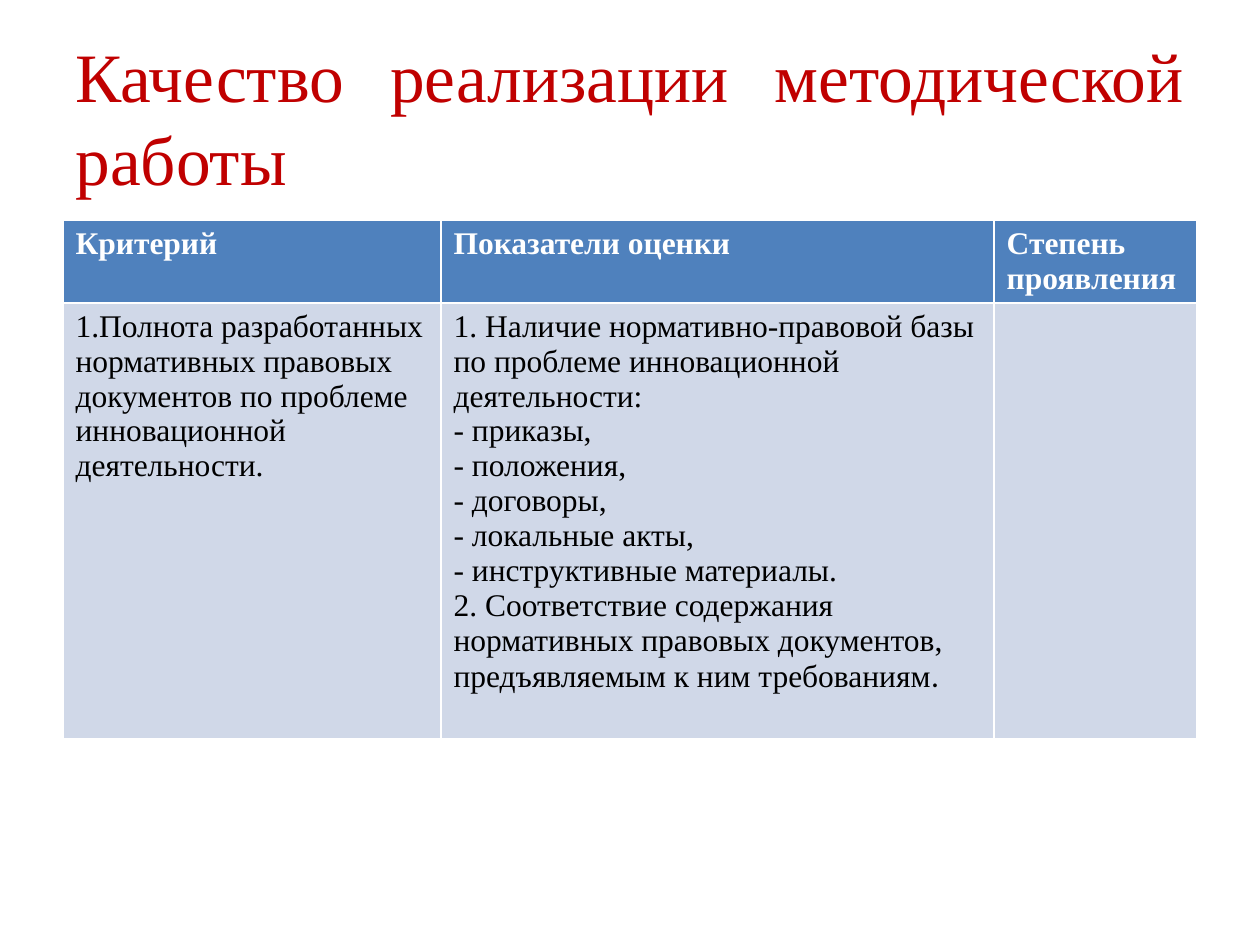
from pptx import Presentation
from pptx.dml.color import RGBColor
from pptx.enum.text import MSO_ANCHOR, MSO_AUTO_SIZE, PP_ALIGN
from pptx.util import Inches, Pt

SERIF = "Times New Roman"
HEADERS = ["Критерий", "Показатели оценки", "Степень проявления"]
CRITERION = [
    "1.Полнота разработанных нормативных правовых документов "
    "по проблеме инновационной деятельности."
]
INDICATORS = [
    "1. Наличие нормативно-правовой базы по проблеме инновационной деятельности:",
    "- приказы,",
    "- положения,",
    "- договоры,",
    "- локальные акты,",
    "- инструктивные материалы.",
    "2. Соответствие содержания нормативных правовых документов, "
    "предъявляемым к ним требованиям",
]
COLUMN_WIDTHS = [3, 4.39, 1.61]
ROW_HEIGHTS = [0.65, 3.46]


def color(value):
    """Turn a hex string into a colour."""
    return RGBColor.from_string(value)


def add_span(para, text, size, ink, bold=False, font=SERIF):
    """Add one formatted run to a paragraph."""
    span = para.add_run()
    span.text = text
    span.font.name = font
    span.font.size = Pt(size)
    span.font.bold = bold
    span.font.color.rgb = color(ink)


def fill_cell(cell, lines, fill, ink, bold=False):
    """Fill a table cell with a colour and one paragraph per line."""
    cell.fill.solid()
    cell.fill.fore_color.rgb = color(fill)
    frame = cell.text_frame
    for index, line in enumerate(lines):
        para = frame.add_paragraph() if index else frame.paragraphs[0]
        add_span(para, line, 18, ink, bold)


def set_title(page, text):
    """Place and format the slide title."""
    title = page.shapes.title
    title.left, title.top = Inches(0.5), Inches(0.3)
    title.width, title.height = Inches(9), Inches(1.25)
    frame = title.text_frame
    frame.word_wrap = True
    frame.auto_size = MSO_AUTO_SIZE.NONE
    frame.vertical_anchor = MSO_ANCHOR.MIDDLE
    para = frame.paragraphs[0]
    para.alignment = PP_ALIGN.JUSTIFY
    add_span(para, text, 39.6, "C00000")


def add_criteria_table(page):
    """Add the table of criteria and their indicators."""
    table = page.shapes.add_table(
        len(ROW_HEIGHTS), len(COLUMN_WIDTHS), Inches(0.5), Inches(1.75),
        Inches(sum(COLUMN_WIDTHS)), Inches(sum(ROW_HEIGHTS)),
    ).table
    for column, width in zip(table.columns, COLUMN_WIDTHS):
        column.width = Inches(width)
    for row, height in zip(table.rows, ROW_HEIGHTS):
        row.height = Inches(height)
    for index, header in enumerate(HEADERS):
        fill_cell(table.cell(0, index), [header], "4F81BD", "FFFFFF", True)
    for index, lines in enumerate([CRITERION, INDICATORS, []]):
        fill_cell(table.cell(1, index), lines, "D0D8E8", "000000")
    closing = table.cell(1, 1).text_frame.paragraphs[-1]
    add_span(closing, ".", 18, "000000", font="Calibri")


def main():
    """Build the slide and save the deck."""
    deck = Presentation()
    deck.slide_width, deck.slide_height = Inches(10), Inches(7.5)
    page = deck.slides.add_slide(deck.slide_layouts[5])
    set_title(page, "Качество реализации методической работы")
    add_criteria_table(page)
    deck.save("out.pptx")


if __name__ == "__main__":
    main()
